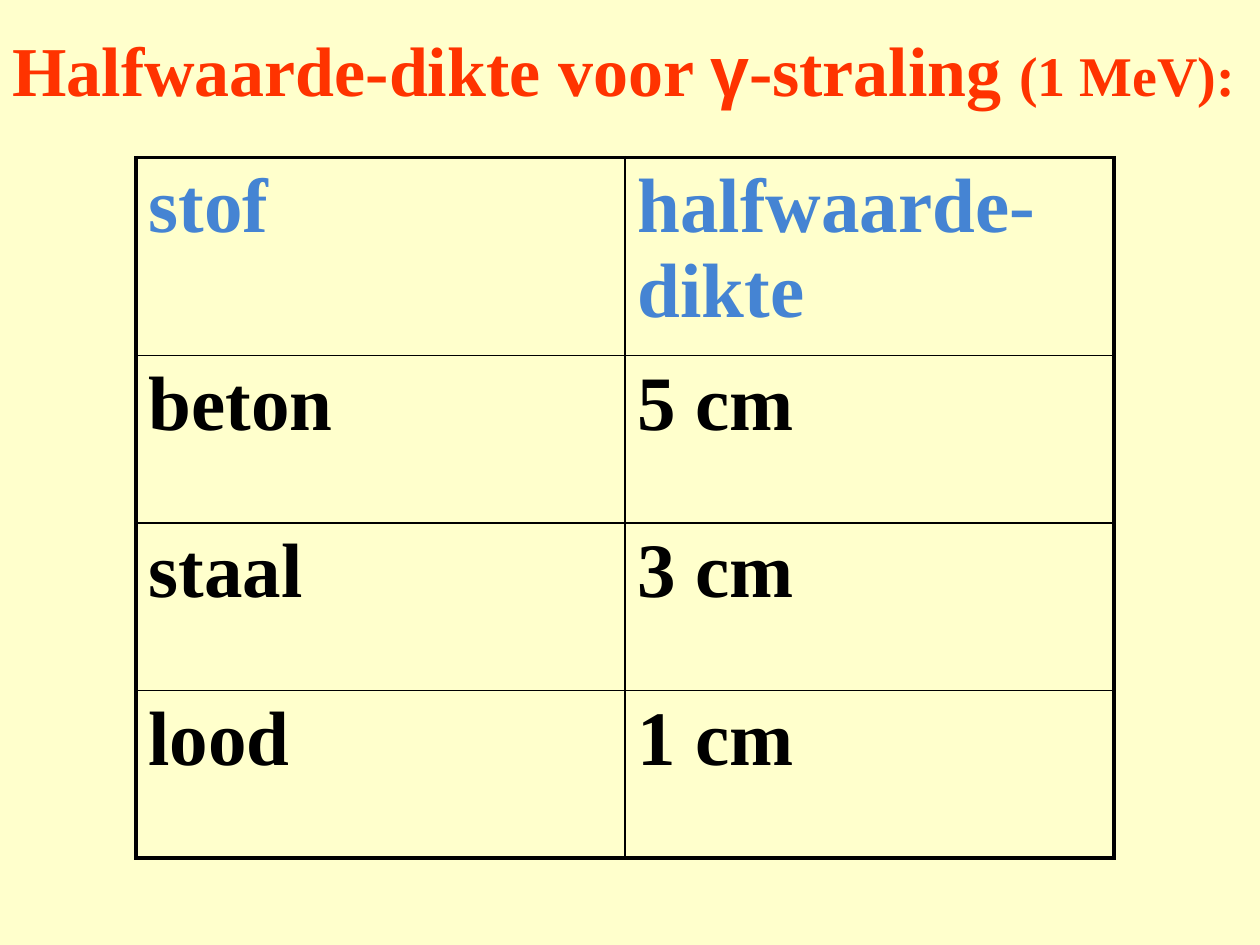
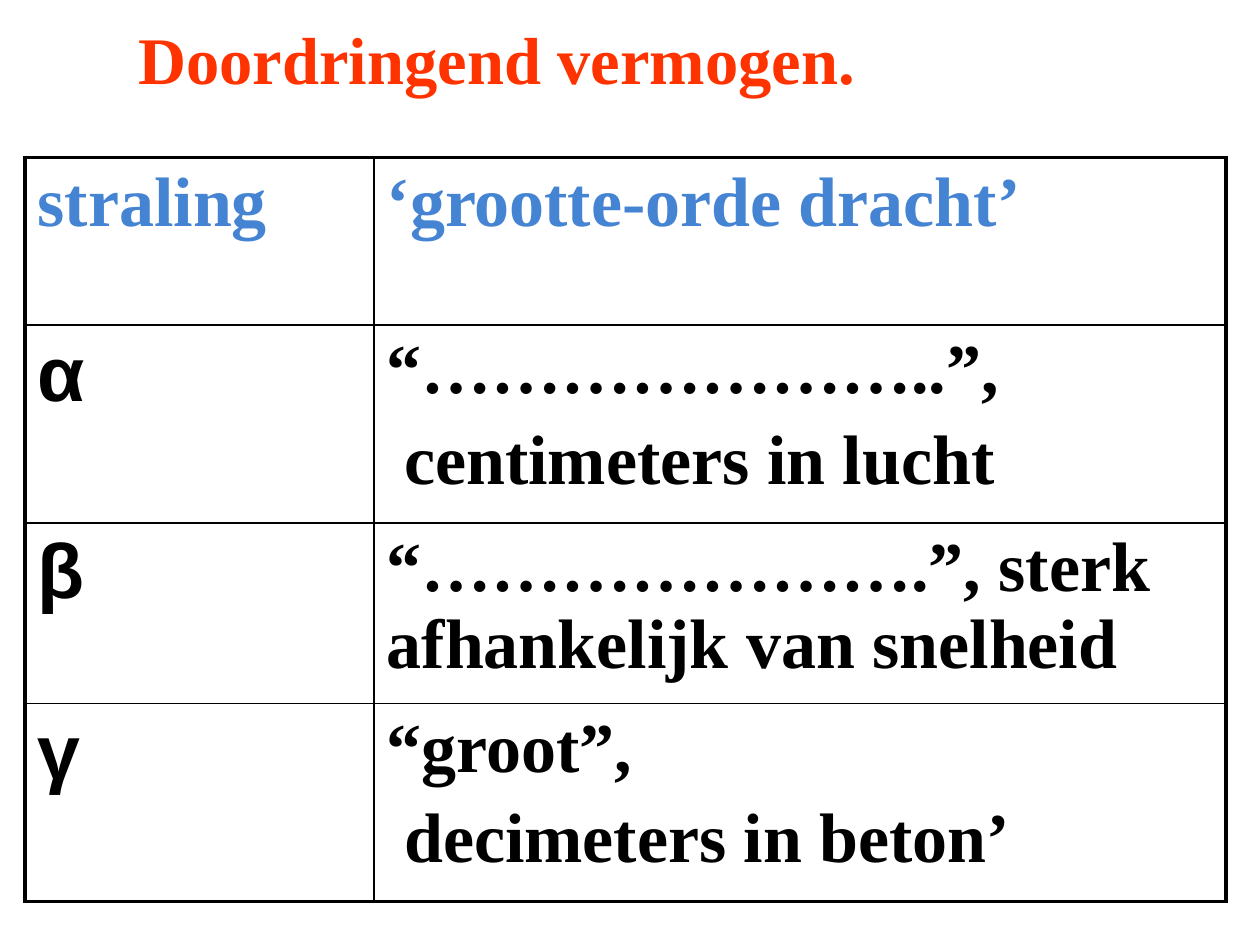
"""Build two slides on half-value thickness and the penetrating power of radiation."""
from dataclasses import dataclass

from lxml.etree import SubElement
from pptx import Presentation
from pptx.dml.color import RGBColor as Rgb
from pptx.enum.text import MSO_ANCHOR as Anchor
from pptx.oxml.ns import qn
from pptx.util import Inches, Pt


@dataclass(frozen=True)
class Theme:
    title: str = "FF3300"
    heading: str = "4584D3"
    ink: str = "000000"
    serif: str = "Times New Roman"
    sans: str = "Arial"
    large: int = 44
    medium: int = 40
    title_size: int = 38
    small: int = 32
    outer_line: float = 2.25
    inner_line: float = 1
    paragraph_gap: float = 7.5


theme = Theme()


def add_text(paragraph, text, *, size=theme.medium, font=theme.serif, color=theme.ink):
    run = paragraph.add_run()
    run.text = text
    run.font.size = Pt(size)
    run.font.name = font
    run.font.bold = True
    run.font.color.rgb = Rgb.from_string(color)


def add_border(cell, side, width):
    line = SubElement(cell._tc.get_or_add_tcPr(), qn(f"a:{side}"), w=str(Pt(width)))
    color = SubElement(SubElement(line, qn("a:solidFill")), qn("a:srgbClr"))
    color.set("val", theme.ink)


slides = [
    {
        "background": "FFFFCC",
        "title_box": (0, 0.08, 10, 0.92),
        "title": [
            ("Halfwaarde-dikte voor ", {"size": theme.medium}),
            ("γ", {"size": theme.medium, "font": theme.sans}),
            ("-straling ", {"size": theme.medium}),
            ("(1 MeV):", {"size": theme.small}),
        ],
        "left": 1.08,
        "columns": [3.88, 3.88],
        "rows": [1.57, 1.33, 1.33, 1.33],
        "size": theme.large,
        "label_font": theme.serif,
        "content": [
            ("stof", "halfwaarde-dikte"),
            ("beton", "5 cm"),
            ("staal", "3 cm"),
            ("lood", "1 cm"),
        ],
    },
    {
        "background": "FFFFFF",
        "title_box": (1, 0, 6.17, 0.92),
        "title": [("Doordringend vermogen.", {"size": theme.title_size})],
        "left": 0.2,
        "columns": [2.77, 6.76],
        "rows": [1.33, 1.57, 1.43, 1.57],
        "size": theme.medium,
        "label_font": theme.sans,
        "content": [
            ("straling", "‘grootte-orde dracht’"),
            ("α", "“…………………..”,\n centimeters in lucht"),
            ("β", "“………………….”, sterk afhankelijk van snelheid"),
            ("γ", "“groot”,\n decimeters in beton’"),
        ],
    },
]

deck = Presentation()
deck.slide_width, deck.slide_height = Inches(10), Inches(7.5)

for content in slides:
    slide = deck.slides.add_slide(deck.slide_layouts[6])
    slide.background.fill.solid()
    slide.background.fill.fore_color.rgb = Rgb.from_string(content["background"])

    widths, heights = content["columns"], content["rows"]
    table = slide.shapes.add_table(
        len(heights), len(widths), Inches(content["left"]), Inches(1.25),
        Inches(sum(widths)), Inches(sum(heights)),
    ).table
    table.first_row = table.horz_banding = False
    for column, width in zip(table.columns, widths):
        column.width = Inches(width)
    for row, height in zip(table.rows, heights):
        row.height = Inches(height)

    for r, texts in enumerate(content["content"]):
        for c, text in enumerate(texts):
            cell = table.cell(r, c)
            edges = {
                "lnL": c == 0,
                "lnR": c == len(widths) - 1,
                "lnT": r == 0,
                "lnB": r == len(heights) - 1,
            }
            for side, is_outer in edges.items():
                add_border(cell, side, theme.outer_line if is_outer else theme.inner_line)
            cell.fill.background()

            is_label = r > 0 and c == 0
            for i, line in enumerate(text.split("\n")):
                paragraph = cell.text_frame.paragraphs[0]
                if i:
                    paragraph = cell.text_frame.add_paragraph()
                    paragraph.space_before = Pt(theme.paragraph_gap)
                add_text(
                    paragraph, line,
                    size=theme.large if is_label else content["size"],
                    font=content["label_font"] if is_label else theme.serif,
                    color=theme.ink if r else theme.heading,
                )

    title = slide.shapes.add_textbox(*map(Inches, content["title_box"])).text_frame
    title.word_wrap = True
    title.vertical_anchor = Anchor.MIDDLE
    for text, style in content["title"]:
        add_text(title.paragraphs[0], text, color=theme.title, **style)

deck.save("out.pptx")
